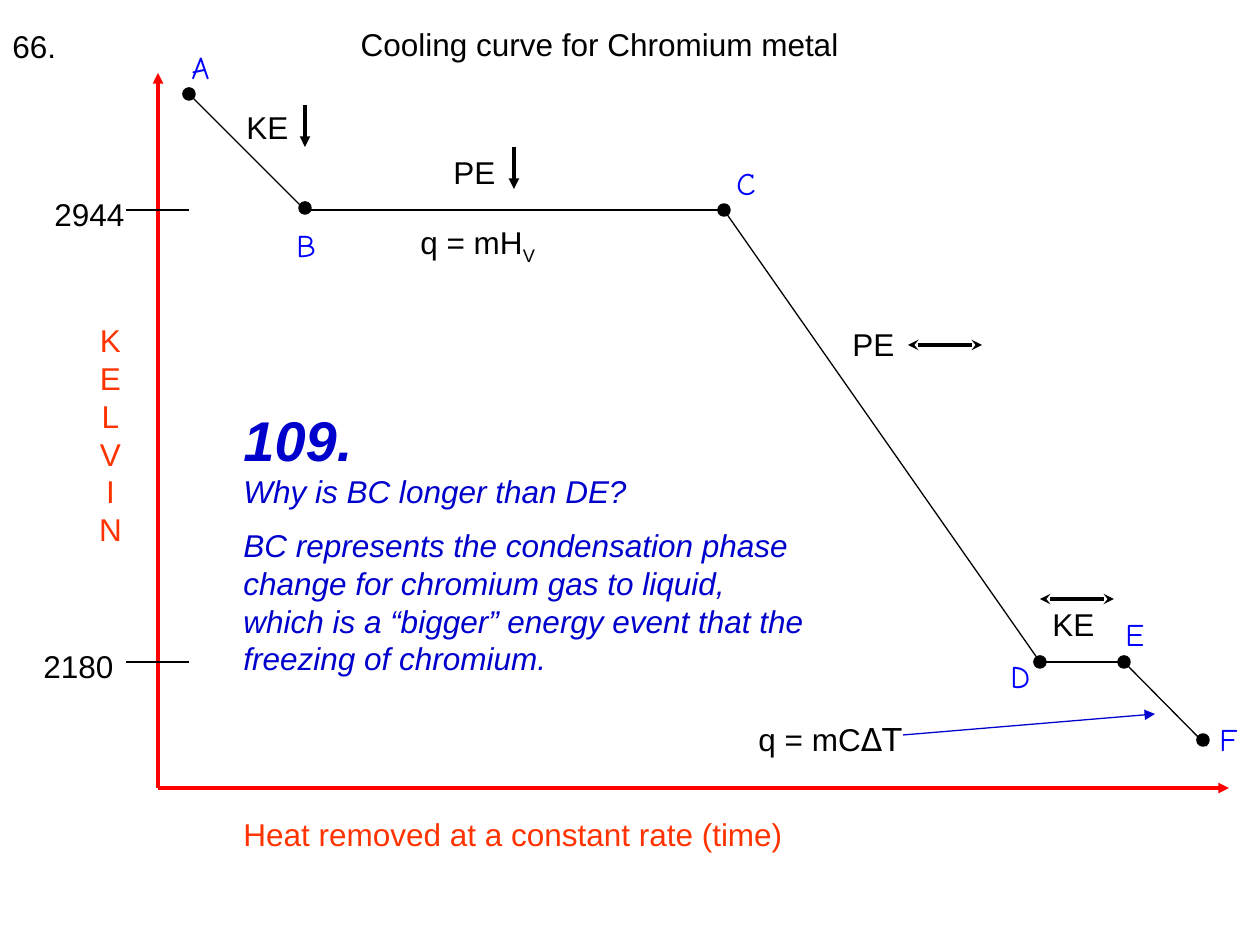
import pptx
import pptx.dml.color
import pptx.enum.shapes
import pptx.enum.text
import pptx.oxml
import pptx.oxml.ns
import pptx.util

EMU_PER_PX = 914400 / 126
COLORS = {"ink": "000000", "axis": "FF0000", "axis_name": "FF3300",
          "point": "0000FF", "answer": "0000CC"}
ALIGN = pptx.enum.text.PP_ALIGN


def px(length):
    return pptx.util.Emu(round(length * EMU_PER_PX))


def rgb(name):
    return pptx.dml.color.RGBColor.from_string(COLORS[name])


def add_xml(parent, tag, **attributes):
    child = pptx.oxml.parse_xml(f"<a:{tag} {pptx.oxml.ns.nsdecls('a')}/>")
    for key, value in attributes.items():
        child.set(key, value)
    parent.append(child)


class Diagram:
    """Draws on one slide in a common style; all lengths are px."""

    def __init__(self, slide, font="Arial", size=18):
        self.slide = slide
        self.font = font
        self.size = size

    def format(self, paragraph, color, align=ALIGN.LEFT, font=None, italic=False):
        paragraph.alignment = align
        paragraph.font.name = font or self.font
        paragraph.font.size = pptx.util.Pt(self.size)
        paragraph.font.color.rgb = rgb(color)
        paragraph.font.italic = italic

    def title(self, words, x, y, width, height):
        title = self.slide.shapes.title
        title.left, title.top, title.width, title.height = map(px, (x, y, width, height))
        frame = title.text_frame
        frame.text = words
        frame.auto_size = pptx.enum.text.MSO_AUTO_SIZE.NONE
        frame.vertical_anchor = pptx.enum.text.MSO_ANCHOR.TOP
        self.format(frame.paragraphs[0], "ink")

    def text(self, words, x, y, width, height=50, color="ink", **style):
        """Add a text box and return its first paragraph and its frame."""
        frame = self.slide.shapes.add_textbox(*map(px, (x, y, width, height))).text_frame
        frame.word_wrap = True
        frame.auto_size = pptx.enum.text.MSO_AUTO_SIZE.SHAPE_TO_FIT_TEXT
        paragraph = frame.paragraphs[0]
        paragraph.text = words
        self.format(paragraph, color, **style)
        return paragraph, frame

    def line(self, start, end, color="ink", width=0.75, head=None, tail=None):
        line = self.slide.shapes.add_connector(
            pptx.enum.shapes.MSO_CONNECTOR.STRAIGHT, *map(px, (*start, *end)))
        line.line.color.rgb = rgb(color)
        line.line.width = pptx.util.Pt(width)
        outline = line.line._get_or_add_ln()
        for tag, arrow in (("headEnd", head), ("tailEnd", tail)):
            if arrow:
                add_xml(outline, tag, type=arrow)
        add_xml(line._element.spPr, "effectLst")

    def dot(self, center, size=10):
        x, y = center
        dot = self.slide.shapes.add_shape(
            pptx.enum.shapes.MSO_SHAPE.OVAL,
            *map(px, (x - size / 2, y - size / 2, size, size)))
        dot.shadow.inherit = False
        dot.fill.solid()
        dot.fill.fore_color.rgb = rgb("ink")
        dot.line.color.rgb = rgb("ink")
        dot.line.width = pptx.util.Pt(2)


def main():
    deck = pptx.Presentation()
    deck.slide_width, deck.slide_height = px(1260), px(945)
    diagram = Diagram(deck.slides.add_slide(deck.slide_layouts[5]))

    diagram.title("Cooling curve for Chromium metal", 348, 19, 525, 50)
    diagram.text("66.", 0, 21, 84)

    origin = (158, 788)
    for axis_end in ((158, 73), (1229, 788)):
        diagram.line(origin, axis_end, "axis", 2, tail="triangle")
    diagram.text("Heat removed at a constant rate (time)", 231, 809, 829, color="axis_name")
    diagram.text("\n".join("KELVIN"), 84, 315, 53, 239, "axis_name", align=ALIGN.CENTER)

    # Curve corner, dot centre, label position
    points = {
        "A": ((189, 94), (189, 94), (179, 42)),
        "B": ((305, 210), (305, 208), (284, 220)),
        "C": ((724, 210), (724, 210), (724, 158)),
        "D": ((1040, 662), (1040, 662), (998, 651)),
        "E": ((1124, 662), (1124, 662), (1113, 609)),
        "F": ((1207, 746), (1203, 740), (1207, 714)),
    }
    corners = [corner for corner, _, _ in points.values()]
    for start, end in zip(corners, corners[1:]):
        diagram.line(start, end)
    for name, (_, center, label) in points.items():
        diagram.dot(center)
        diagram.text(name, *label, 53, color="point", font="Comic Neue")

    for kelvin, x, y in (("2944", 42, 210), ("2180", 31, 662)):
        diagram.line((126, y), (189, y))
        diagram.text(kelvin, x, y - 21, 116)

    for energy, x, y in (("KE", 234, 102), ("PE", 441, 147),
                         ("PE", 840, 319), ("KE", 1040, 599)):
        diagram.text(energy, x, y, 74)
    for x, y in ((305, 105), (514, 147)):
        diagram.line((x, y), (x, y + 42), width=2, tail="triangle")
    for x, y in ((908, 345), (1040, 599)):
        diagram.line((x, y), (x + 74, y), width=2, head="stealth", tail="stealth")

    vaporizing, _ = diagram.text("q = mH", 408, 217, 231)
    subscript = vaporizing.add_run()
    subscript.text = "V"
    subscript._r.get_or_add_rPr().set("baseline", "-25000")

    cooling, _ = diagram.text("q = mC", 693, 714, 221, align=ALIGN.RIGHT)
    change = cooling.add_run()
    change.text = "ΔT"
    change.font.name = "DejaVu Sans"
    diagram.line((903, 735), (1155, 714), "answer", tail="triangle")

    question, frame = diagram.text("109. \nWhy is BC longer than DE?", 231, 399, 703, 291,
                                   "answer", italic=True)
    number = question.runs[0]
    number.font.size = pptx.util.Pt(32)
    number.font.bold = True
    answer = frame.add_paragraph()
    answer.text = ("BC represents the condensation phase\n"
                   "change for chromium gas to liquid,\n"
                   "which is a “bigger” energy event that the freezing of chromium.")
    answer.space_before = pptx.util.Pt(9)
    diagram.format(answer, "answer", italic=True)

    deck.save("out.pptx")


if __name__ == "__main__":
    main()
